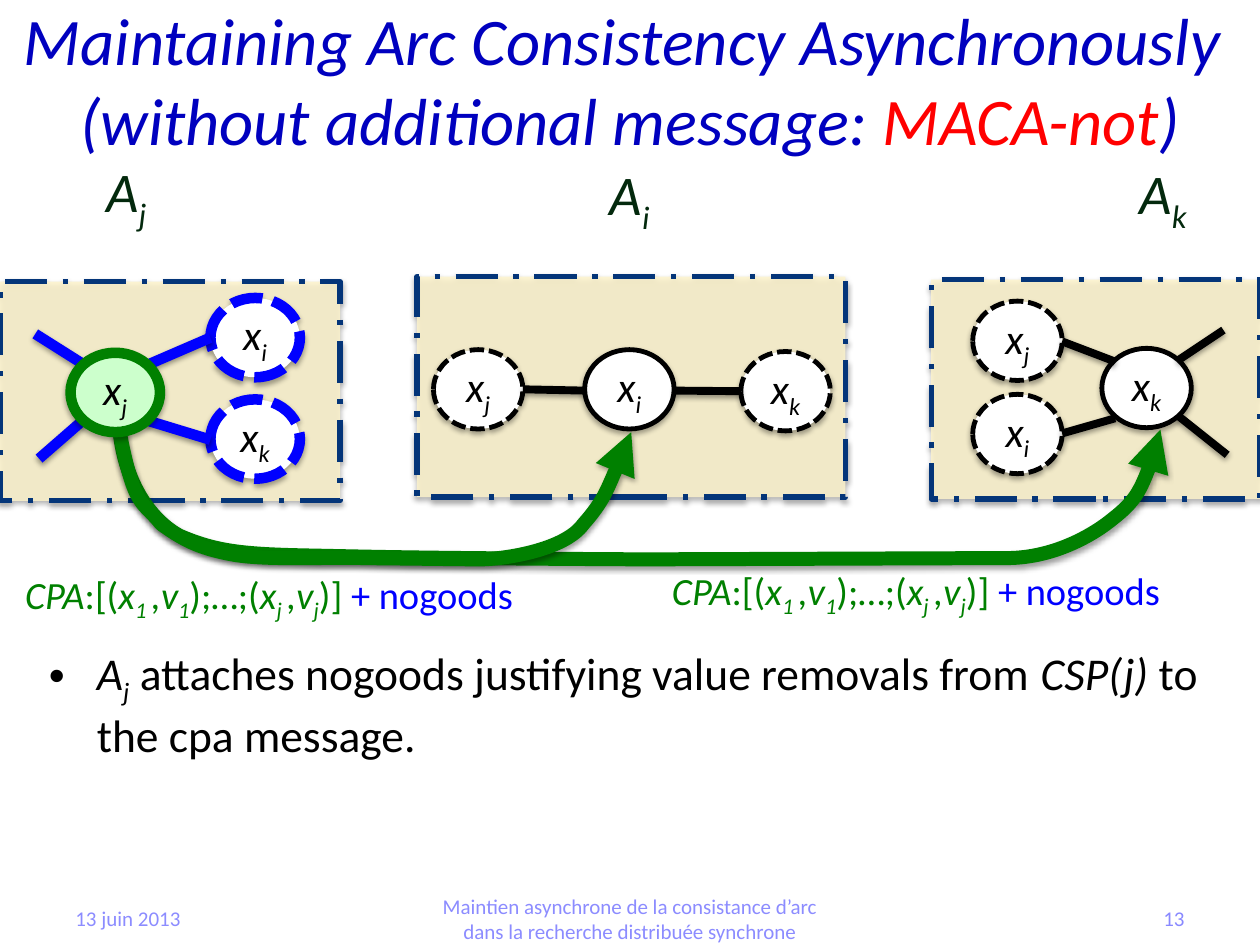
from lxml import etree
from pptx import Presentation
from pptx import util as u
from pptx.dml.color import RGBColor
from pptx.enum import dml, shapes, text
from pptx.oxml.ns import qn

WIDTH, HEIGHT = 10, 7.5
COLS, ROWS = 100, 75
NODE = (7.1, 6.3)
COLORS = dict(black="000000", white="FFFFFF", blue="0000FF", green="008000",
              mint="CCFFCC", sand="FFF5CC", navy="043579", title="0000BF",
              red="FF0000", agent="03290D", footer="8C8CFF", number="8989FF")
LEFT, CENTER, RIGHT = text.PP_ALIGN.LEFT, text.PP_ALIGN.CENTER, text.PP_ALIGN.RIGHT
MIDDLE, TOP = text.MSO_ANCHOR.MIDDLE, text.MSO_ANCHOR.TOP
DASHED, DASH_DOT = dml.MSO_LINE.SQUARE_DOT, dml.MSO_LINE.LONG_DASH_DOT

AGENT_BOXES = [(33.1, 21.95, 34, 17.5), (73.9, 22.2, 26.1, 17.4), (0, 22.35, 27, 17.4)]
AGENTS = [("j", 7.45, 11.9, 5.3), ("i", 47.4, 12.2, 5.3), ("k", 89.45, 12.1, 5.9)]
OWN_NODES = [("i", 46.4, 27.75), ("k", 87.45, 27.65)]
NEIGHBOURS = [("j", 34.4, 27.75), ("k", 58.8, 27.9), ("j", 77.2, 23.9), ("i", 77.2, 31.3)]
LINKS = [(41.5, 30.9, 46.4, 31), (53.5, 31, 58.8, 31.05), (84.3, 27.1, 88.5, 28.7),
         (84.3, 34.4, 88.5, 33.2), (97.1, 26.2, 93.5, 28.6), (93.5, 33, 97.4, 36.1)]
J_NEIGHBOURS = [("i", 16.7, 23.65), ("k", 16.7, 31.7)]
J_LINKS = [(11.6, 29, 16.7, 26.8), (2.8, 26.5, 6.6, 28.9),
           (3.1, 36.4, 6.6, 33.35), (11.6, 33.35, 16.7, 34.9)]
MESSAGE_ARCS = [
    [(9.5, 34.2), (9.8, 37.5), (11.4, 40.9), (14.2, 42.5), (17.2, 43.8), (19.4, 44),
     (24.7, 44.1), (29.9, 44.2), (32.8, 44.3), (51.1, 44.4), (60.7, 44.37), (70.3, 44.33),
     (79.9, 44.3), (83.9, 44.3), (87.1, 42.2), (88.3, 41.2), (90.1, 39.8), (91.3, 37.7),
     (92.1, 34.1)],
    [(9.5, 34.3), (10.7, 40.5), (11.3, 39.7), (12.8, 41.6), (14.5, 42.8), (15.7, 43.5),
     (18.4, 44), (21.1, 44.5), (25.6, 44.2), (29.2, 44.3), (32.1, 44.33), (35.1, 44.37),
     (38, 44.4), (39.9, 44.4), (44.8, 43.7), (46.3, 41.6), (47.9, 39.8), (49.1, 36.9),
     (50.1, 34.3)],
]

TITLE = [("Maintaining Arc Consistency Asynchronously ", "i"), ("\n", ""),
         ("(without additional message: ", "i"), ("MACA-not", "i", "red"), (")", "i")]
CPA = [("CPA", "i"), (":[(", ""), ("x", "i"), ("1 ", "is"), (",v", "i"), ("1", "is"),
       (");…;(", ""), ("x", "i"), ("j ", "is"), (",v", "i"), ("j", "is"), (")] ", ""),
       ("+ nogoods", "", "blue")]
BODY = [("A", "i"), ("j", "is"), (" attaches nogoods justifying value removals from ", ""),
        ("CSP(j)", "i"), (" to the cpa message.", "")]
FOOTER = "Maintien asynchrone de la consistance d’arc dans la recherche distribuée synchrone"
LABELS = [((0, 0, 100, 12.5), TITLE, 38, "title", CENTER, MIDDLE, True),
          ((1, 44.8, 42.2, 4.7), CPA, 22, "green", LEFT, TOP, False),
          ((52.35, 44.5, 46.7, 4.7), CPA, 22, "green", LEFT, TOP, True),
          ((5, 70.9, 23.3, 4), [("13 juin 2013", "")], 12, "footer", LEFT, MIDDLE, True),
          ((32.5, 70.9, 35, 4), [(FOOTER, "")], 12, "footer", CENTER, MIDDLE, True),
          ((71.7, 70.9, 23.3, 4), [("13", "")], 12, "number", RIGHT, MIDDLE, True)]
LABELS += [((x, y, w, 6.3), [("A", "i"), (name, "is")], 32, "agent", LEFT, TOP, False)
           for name, x, y, w in AGENTS]

prs = Presentation()
prs.slide_width, prs.slide_height = u.Inches(WIDTH), u.Inches(HEIGHT)
slide = prs.slides.add_slide(prs.slide_layouts[6])


def grid(*values):
    steps = (prs.slide_width / COLS, prs.slide_height / ROWS)
    return [round(value * steps[i % 2]) for i, value in enumerate(values)]


def rgb(color):
    return RGBColor.from_string(COLORS[color])


def assign(target, **values):
    for name, value in values.items():
        setattr(target, name, value)


def child(parent, tag, **attributes):
    return etree.SubElement(parent, qn(tag), {k: str(v) for k, v in attributes.items()})


def outline(part, color, width, dash=None):
    part.line.color.rgb = rgb(color)
    assign(part.line, width=u.Pt(width), dash_style=dash)


def cast_shadow(part, distance, alpha):
    effects = child(part._element.spPr, "a:effectLst")
    shade = child(effects, "a:outerShdw", blurRad=u.Pt(3.1), dist=u.Pt(distance),
                  dir=5400000, rotWithShape=0)
    child(child(shade, "a:srgbClr", val=COLORS["black"]), "a:alpha", val=alpha * 1000)


def write(frame, runs, size, color, align, spacing=None, **layout):
    assign(frame, **layout)
    paragraph = frame.paragraphs[0]
    paragraph.alignment = align
    for words, flags, *tint in runs:
        if words == "\n":
            paragraph.add_line_break()
            continue
        run = paragraph.add_run()
        run.text = words
        assign(run.font, name="Calibri", size=u.Pt(size), italic="i" in flags)
        run.font.color.rgb = rgb(tint[0] if tint else color)
        if "s" in flags:
            run.font._element.set("baseline", "-25000")
        if spacing:
            run.font._element.set("spc", str(spacing))
    return paragraph


def solid(kind, place, fill, *line):
    part = slide.shapes.add_shape(kind, *grid(*place))
    part.fill.solid()
    part.fill.fore_color.rgb = rgb(fill)
    outline(part, *line)
    cast_shadow(part, 1.8, 35)
    return part


def node(name, x, y, fill, *line):
    part = solid(shapes.MSO_SHAPE.OVAL, (x, y, *NODE), fill, *line)
    write(part.text_frame, [("x", "i"), (name, "is")], 24, "black", CENTER, -150,
          margin_left=0, margin_right=0, margin_top=0, margin_bottom=0,
          vertical_anchor=MIDDLE, word_wrap=True)


def link(ends, *line):
    part = slide.shapes.add_connector(shapes.MSO_CONNECTOR.STRAIGHT, *grid(*ends))
    outline(part, *line)
    cast_shadow(part, 1.6, 38)


def arc(points):
    start, *rest = [grid(*point) for point in points]
    builder = slide.shapes.build_freeform(*start)
    builder.add_line_segments(rest, close=False)
    part = builder.convert_to_shape()
    part.fill.background()
    outline(part, "green", 8)
    child(part.line._get_or_add_ln(), "a:tailEnd", type="triangle")
    cast_shadow(part, 1.6, 38)
    route = part._element.xpath(".//a:path")[0]
    steps = route.findall(qn("a:lnTo"))
    for i in range(0, len(steps), 3):
        curve = child(route, "a:cubicBezTo")
        for step in steps[i:i + 3]:
            curve.append(step[0])
            route.remove(step)


def label(place, runs, size, color, align, anchor, wrap):
    box = slide.shapes.add_textbox(*grid(*place))
    return write(box.text_frame, runs, size, color, align,
                 vertical_anchor=anchor, word_wrap=wrap)


for place in AGENT_BOXES:
    box = solid(shapes.MSO_SHAPE.RECTANGLE, place, "sand", "navy", 3, DASH_DOT)
    child(box._element.spPr.find(qn("a:solidFill"))[0], "a:alpha", val=82000)
for own in OWN_NODES:
    node(*own, "white", "black", 2.75)
for neighbour in NEIGHBOURS:
    node(*neighbour, "white", "black", 2.75, DASHED)
for ends in LINKS:
    link(ends, "black", 4.5)
for points in MESSAGE_ARCS:
    arc(points)
for neighbour in J_NEIGHBOURS:
    node(*neighbour, "white", "blue", 6, DASHED)
for ends in J_LINKS:
    link(ends, "blue", 6)
node("j", 5.6, 28, "mint", "green", 6)

for entry in LABELS:
    label(*entry)
bullet = label((2.9, 50.7, 93.9, 9.8), BODY, 26, "black", LEFT, TOP, True)
indent = u.Inches(0.38)
properties = bullet._p.get_or_add_pPr()
properties.set("marL", str(indent))
properties.set("indent", str(-indent))
child(properties, "a:buFont", typeface="Arial")
child(properties, "a:buChar", char="•")

prs.save("out.pptx")
